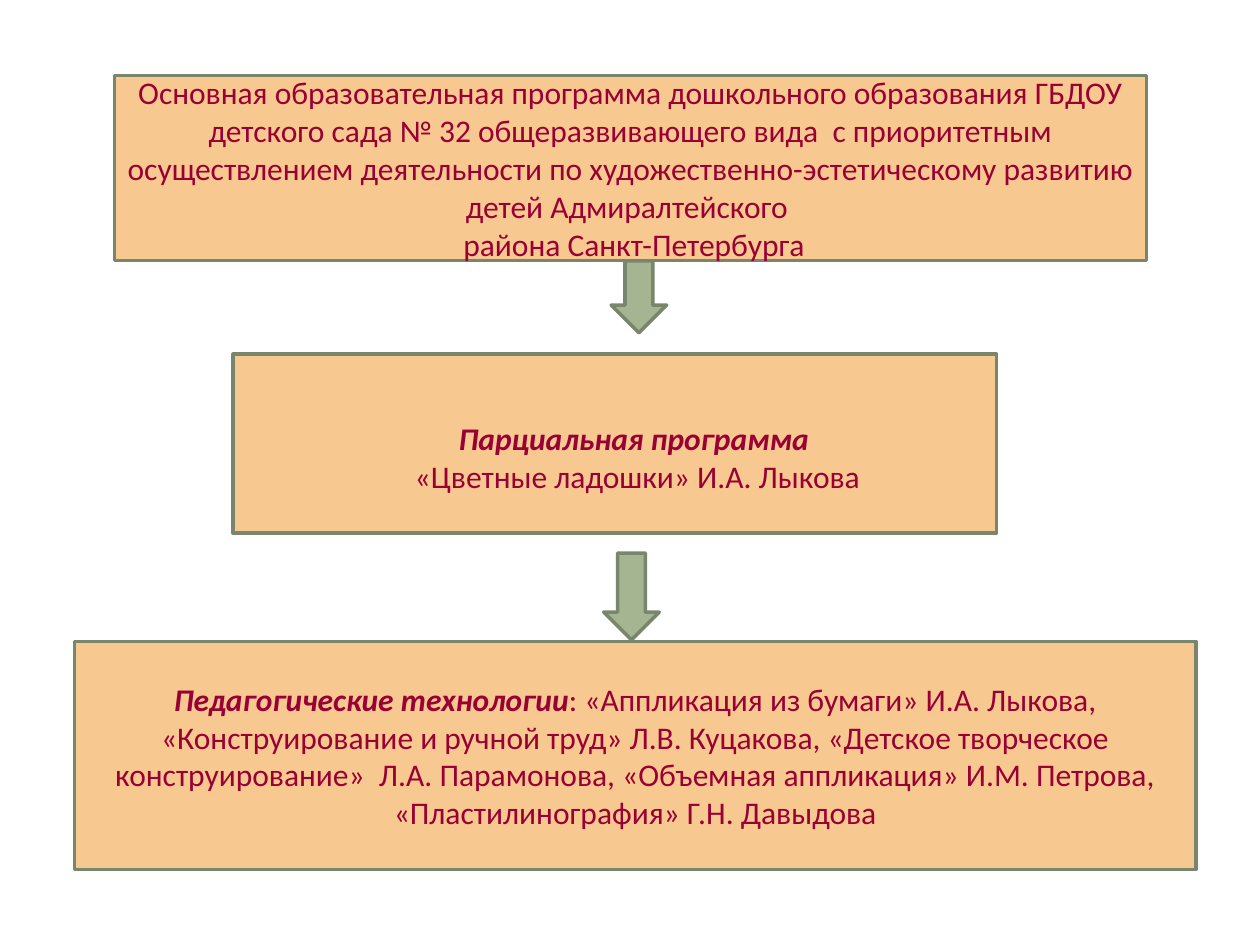
from pptx import Presentation
from pptx.dml.color import RGBColor
from pptx.enum.shapes import MSO_SHAPE
from pptx.enum.text import MSO_ANCHOR, MSO_AUTO_SIZE, PP_ALIGN
from pptx.util import Cm, Pt

RECTANGLE = MSO_SHAPE.RECTANGLE
DOWN_ARROW = MSO_SHAPE.DOWN_ARROW
CENTER = PP_ALIGN.CENTER
MIDDLE, TOP = MSO_ANCHOR.MIDDLE, MSO_ANCHOR.TOP
FIT_SHAPE = MSO_AUTO_SIZE.SHAPE_TO_FIT_TEXT

BLANK_LAYOUT = 6
ARROW_WIDTH = 1.12


def color(value):
    return RGBColor.from_string(value)


def add_span(para, text, font="Calibri", size=18, ink="990033", strong=False):
    """Add text to a paragraph; strong means bold italic."""
    span = para.add_run()
    span.text = text
    span.font.name = font
    span.font.size = Pt(size)
    span.font.color.rgb = color(ink)
    span.font.bold = span.font.italic = strong


class ProgramSlide:
    box_fill = "F8C891"
    arrow_fill = "A5B592"
    outline = "7A866C"
    outline_width = 2

    def __init__(self, page):
        self.page = page

    def shape(self, kind, fill, place):
        shape = self.page.shapes.add_shape(kind, *map(Cm, place))
        shape.shadow.inherit = False
        shape.fill.solid()
        shape.fill.fore_color.rgb = color(fill)
        shape.line.color.rgb = color(self.outline)
        shape.line.width = Pt(self.outline_width)
        return shape

    def fill_text(self, frame, paragraphs, anchor):
        """Each paragraph is a list of (text, strong) pairs."""
        frame.word_wrap = True
        frame.vertical_anchor = anchor
        for index, spans in enumerate(paragraphs):
            para = frame.add_paragraph() if index else frame.paragraphs[0]
            para.alignment = CENTER
            for text, strong in spans:
                add_span(para, text, strong=strong)

    def box(self, *place, paragraphs=()):
        box = self.shape(RECTANGLE, self.box_fill, place)
        self.fill_text(box.text_frame, paragraphs, MIDDLE)

    def label(self, *place, paragraphs):
        label = self.page.shapes.add_textbox(*map(Cm, place))
        self.fill_text(label.text_frame, paragraphs, TOP)
        label.text_frame.auto_size = FIT_SHAPE

    def arrow(self, left, top, height):
        self.shape(DOWN_ARROW, self.arrow_fill, (left, top, ARROW_WIDTH, height))


def main():
    deck = Presentation()
    deck.slide_width, deck.slide_height = Cm(25.4), Cm(19.05)
    slide = ProgramSlide(deck.slides.add_slide(deck.slide_layouts[BLANK_LAYOUT]))

    # Main educational programme
    slide.box(2.31, 1.52, 20.8, 3.73, paragraphs=[
        [("Основная образовательная программа дошкольного образования ГБДОУ "
          "детского сада № 32 общеразвивающего вида  с приоритетным "
          "осуществлением деятельности по художественно-эстетическому "
          "развитию детей Адмиралтейского ", False)],
        [(" района Санкт-Петербурга", False)],
    ])

    # Partial programme: box with a separate label over it
    slide.box(4.7, 7.14, 15.39, 3.61)
    slide.label(6.5, 8.33, 12.7, 1.8, paragraphs=[
        [("Парциальная программа ", True)],
        [("«Цветные ладошки» И.А. Лыкова", False)],
    ])

    # Teaching technologies
    slide.box(1.5, 12.93, 22.61, 4.6, paragraphs=[
        [("Педагогические технологии", True),
         (": «Аппликация из бумаги» И.А. Лыкова, «Конструирование и ручной "
          "труд» Л.В. Куцакова, «Детское творческое конструирование»  "
          "Л.А. Парамонова, «Объемная аппликация» И.М. Петрова, "
          "«Пластилинография» Г.Н. Давыдова", False)],
    ])

    # Arrows between the levels
    slide.arrow(12.32, 5.26, 1.45)
    slide.arrow(12.17, 11.15, 1.75)

    deck.save("out.pptx")


if __name__ == "__main__":
    main()
